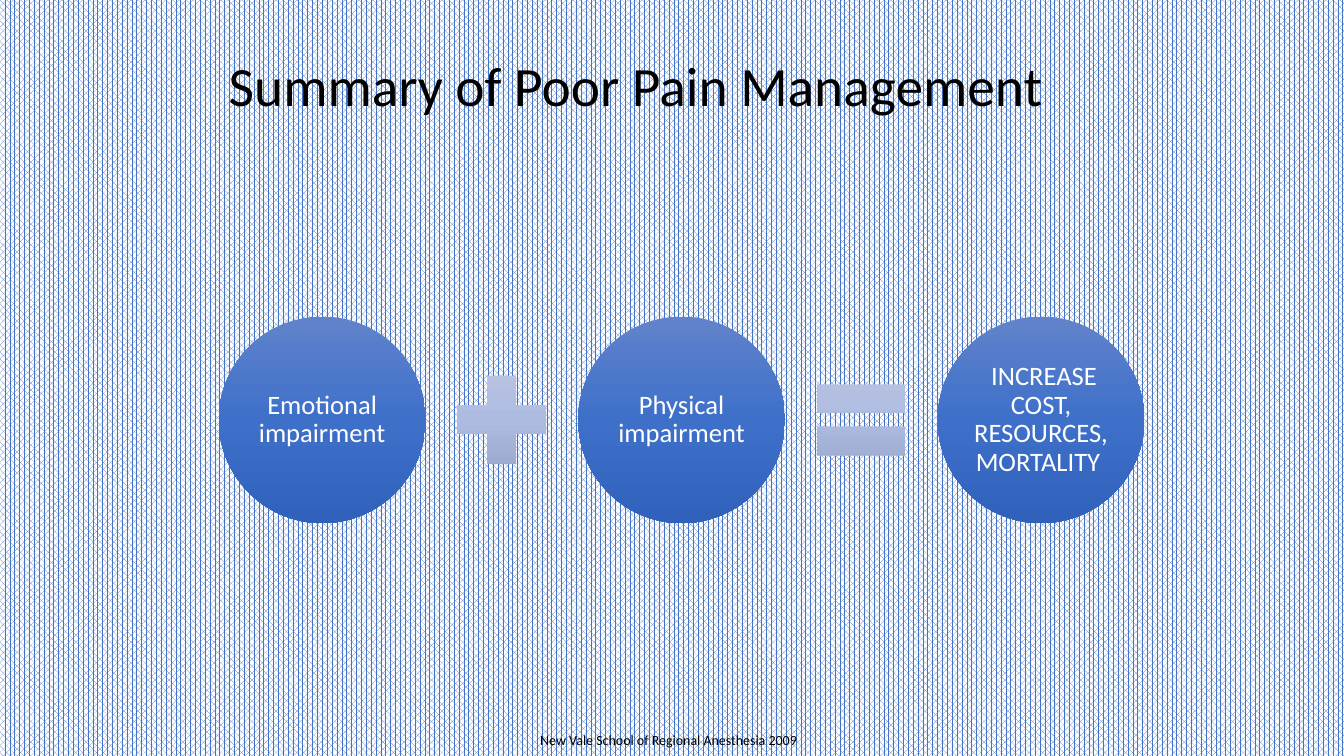
"""Build the slide that sums up the results of poor pain management."""
from copy import deepcopy

from pptx import Presentation
from pptx.dml.color import RGBColor
from pptx.enum.dml import MSO_PATTERN
from pptx.enum.shapes import MSO_SHAPE
from pptx.enum.text import MSO_ANCHOR, MSO_AUTO_SIZE, PP_ALIGN
from pptx.oxml.ns import qn
from pptx.util import Inches, Pt

CIRCLE_COLORS = ("6183CB", "3E70CA", "3062BB")
SIGN_COLORS = ("BBC5E3", "AEBBE0", "98A4CB")


def add_gradient_shape(kind, left, top, size, colors):
    shape = slide.shapes.add_shape(kind, Inches(left), Inches(top), Inches(size), Inches(size))
    shape.shadow.inherit = False
    shape.line.fill.background()
    shape.fill.gradient()
    shape.fill.gradient_angle = 270
    stop_list = shape.element.spPr.find(qn("a:gradFill")).find(qn("a:gsLst"))
    stop_list.insert(1, deepcopy(stop_list[0]))
    for stop, position, color in zip(shape.fill.gradient_stops, (0, 0.5, 1), colors):
        stop.position = position
        stop.color.rgb = RGBColor.from_string(color)
    return shape


def add_text(frame, text, size, color):
    paragraph = frame.paragraphs[0]
    run = paragraph.add_run()
    run.text = text
    run.font.name = "Calibri"
    run.font.size = Pt(size)
    run.font.color.rgb = RGBColor.from_string(color)
    return paragraph


presentation = Presentation()
presentation.slide_width = Inches(13.33)
presentation.slide_height = Inches(7.5)
slide = presentation.slides.add_slide(presentation.slide_layouts[6])

background = slide.background.fill
background.patterned()
background.pattern = MSO_PATTERN.PERCENT_70
background.fore_color.rgb = RGBColor.from_string("4472C4")
background.back_color.rgb = RGBColor.from_string("FFFFFF")

title = slide.shapes.add_textbox(Inches(2.17), Inches(0.25), Inches(9), Inches(1.25))
title.text_frame.word_wrap = True
title.text_frame.vertical_anchor = MSO_ANCHOR.MIDDLE
add_text(title.text_frame, "Summary of Poor Pain Management", 39.6, "000000").line_spacing = 0.9

row_left, row_right = 2.17, 9.3
pitch = (row_right - row_left) / 2
terms = [
    ("Emotional impairment", MSO_SHAPE.MATH_PLUS),
    ("Physical impairment", MSO_SHAPE.MATH_EQUAL),
    (" INCREASE COST, RESOURCES, MORTALITY ", None),
]
for index, (label, sign) in enumerate(terms):
    left = row_left + index * pitch
    circle = add_gradient_shape(MSO_SHAPE.OVAL, left, 3.14, 2.05, CIRCLE_COLORS)
    frame = circle.text_frame
    frame.word_wrap = True
    frame.vertical_anchor = MSO_ANCHOR.MIDDLE
    frame.margin_left = frame.margin_right = Inches(0.03)
    frame.margin_top = frame.margin_bottom = Inches(0.03)
    paragraph = add_text(frame, label, 19, "FFFFFF")
    paragraph.alignment = PP_ALIGN.CENTER
    paragraph.line_spacing = 0.9
    if sign is not None:
        add_gradient_shape(sign, left + 2.21, 3.57, 1.19, SIGN_COLORS)

footer = slide.shapes.add_textbox(Inches(5.26), Inches(7.21), Inches(2.8), Inches(0.27))
footer.text_frame.word_wrap = False
footer.text_frame.auto_size = MSO_AUTO_SIZE.SHAPE_TO_FIT_TEXT
add_text(footer.text_frame, "New Vale School of Regional Anesthesia 2009", 10, "000000")

presentation.save("out.pptx")
